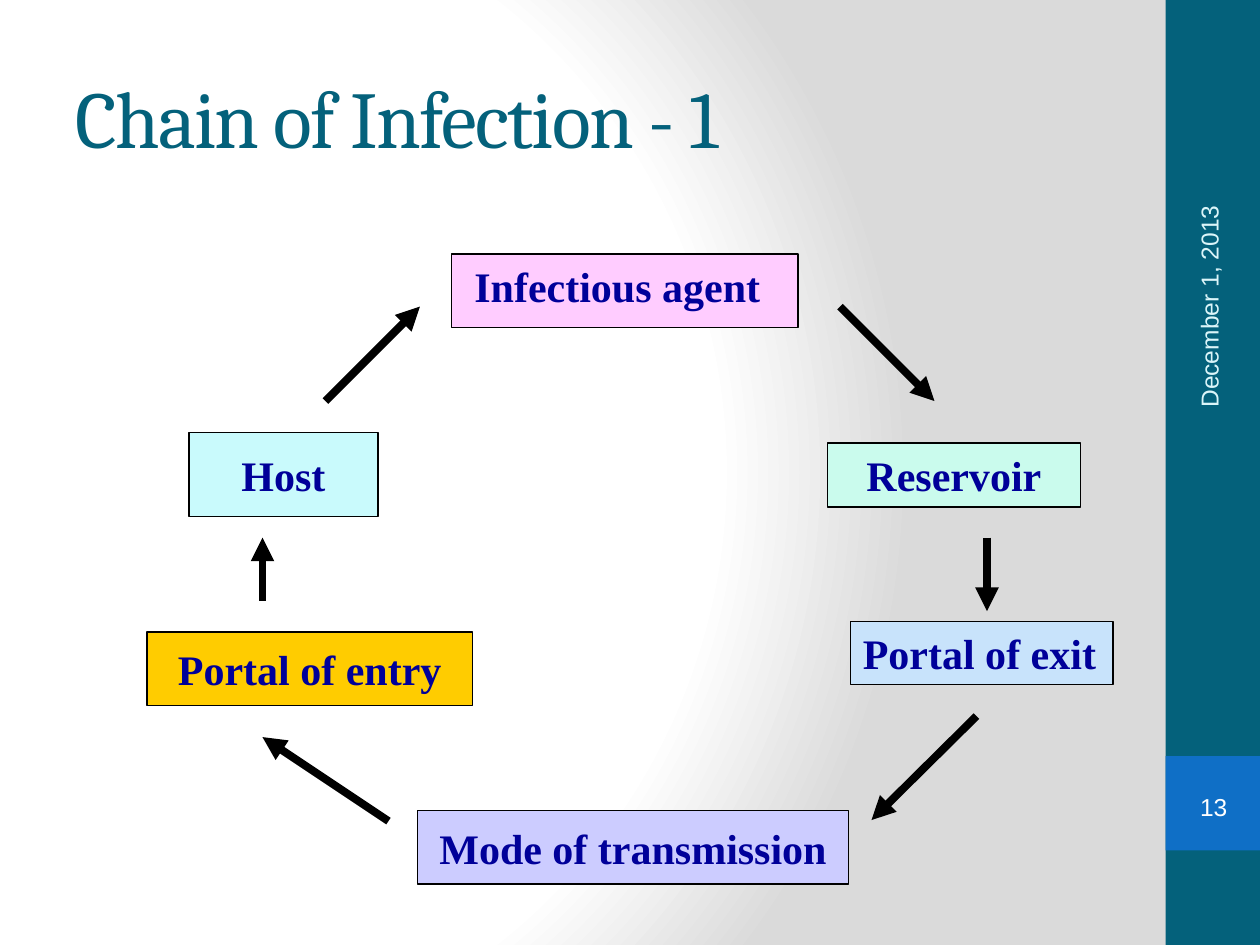
from lxml import etree
from pptx import Presentation
from pptx.dml.color import RGBColor
from pptx.enum.shapes import MSO_CONNECTOR as Conn, MSO_SHAPE as Shape
from pptx.enum.text import MSO_ANCHOR as Anchor, PP_ALIGN as Align
from pptx.oxml import parse_xml
from pptx.oxml.ns import nsdecls, qn
from pptx.util import Inches, Pt

TEAL = RGBColor(0x04, 0x61, 0x7B)
BLUE = RGBColor(0x0F, 0x6F, 0xC6)
NAVY = RGBColor(0x00, 0x00, 0x99)
PALE = RGBColor(0xDB, 0xF5, 0xF9)
WHITE = RGBColor(0xFF, 0xFF, 0xFF)
BLACK = RGBColor(0x00, 0x00, 0x00)
PINK = RGBColor(0xFF, 0xCC, 0xFF)
LILAC = RGBColor(0xCC, 0xCC, 0xFF)
GOLD = RGBColor(0xFF, 0xCC, 0x00)
CYAN = RGBColor(0xC9, 0xFA, 0xFC)
MINT = RGBColor(0xCA, 0xFB, 0xED)
SKY = RGBColor(0xC8, 0xE3, 0xFB)

# The slide is a grid of 120 columns by 90 rows, twelve to the inch
COLS, ROWS = 120, 90
CELL = Inches(1) // 12

# Links of the chain: column, row, width, height, fill, text, anchor, alignment
LINKS = [
    (29, 0, 33, 7, PINK, "", Anchor.TOP, Align.LEFT),
    (25.8, 53, 41, 7, LILAC, "Mode of transmission", Anchor.MIDDLE, Align.CENTER),
    (0, 36, 31, 7, GOLD, "Portal of entry", Anchor.MIDDLE, Align.CENTER),
    (4, 17, 18, 8, CYAN, "Host", Anchor.MIDDLE, Align.CENTER),
    (30, 0, 34.2, 6, None, "Infectious agent", Anchor.TOP, Align.LEFT),
    (64.8, 18, 24.1, 6.1, MINT, "Reservoir", Anchor.TOP, Align.CENTER),
    (67, 35, 25, 6, SKY, "Portal of exit", Anchor.TOP, Align.LEFT),
]
# Arrows between links: from column, row, to column, row
ARROWS = [
    (66, 5, 75, 14), (80, 27, 80, 34), (79, 44, 69, 53.9),
    (11, 33, 11, 27), (17, 14, 26, 5), (23, 54, 11, 46),
]


def cells(*nums):
    return [round(n * CELL) for n in nums]


def block(slide, box, fill=None, line=None, kind=Shape.RECTANGLE):
    shape = slide.shapes.add_shape(kind, *cells(*box))
    shape.shadow.inherit = False
    if fill is None:
        shape.fill.background()
    else:
        shape.fill.solid()
        shape.fill.fore_color.rgb = fill
    if line is None:
        shape.line.fill.background()
    else:
        shape.line.color.rgb = line
        shape.line.width = Pt(0.75)
    return shape


def write(shape, text, font, size, color, bold=False, align=Align.LEFT,
          anchor=Anchor.MIDDLE, wrap=True):
    frame = shape.text_frame
    frame.word_wrap = wrap
    frame.vertical_anchor = anchor
    para = frame.paragraphs[0]
    para.text = text
    para.alignment = align
    para.font.name = font
    para.font.size = Pt(size)
    para.font.bold = bold
    para.font.color.rgb = color
    return frame


def arrow(slide, x1, y1, x2, y2):
    line = slide.shapes.add_connector(Conn.STRAIGHT, *cells(x1, y1, x2, y2))
    line.line.color.rgb = BLACK
    line.line.width = Pt(4.5)
    etree.SubElement(line.line._get_or_add_ln(), qn("a:tailEnd"), type="triangle")
    etree.SubElement(line.element.spPr, qn("a:effectLst"))


def backdrop(slide):
    slide.background.fill.solid()
    solid = slide.element.find(".//" + qn("p:bgPr")).find(qn("a:solidFill"))
    stops = "".join(
        f'<a:gs pos="{pos * 1000}"><a:srgbClr val="{color}"/></a:gs>'
        for pos, color in [(0, "FFFFFF"), (75, "FFFFFF"), (100, "DADADA")])
    glow = parse_xml(
        f'<a:gradFill {nsdecls("a")} rotWithShape="1"><a:gsLst>{stops}</a:gsLst>'
        '<a:path path="circle"><a:fillToRect l="20000" t="50000" r="100000"'
        ' b="50000"/></a:path></a:gradFill>')
    solid.getparent().replace(solid, glow)


def sidebar(slide, x, y, w, h):
    block(slide, (x, y, w, h), TEAL)
    block(slide, (x, y + 0.8 * h, w, w), BLUE)
    # Date, turned to read upwards
    long, thick = 32, 4.8
    mid = x + 0.46 * w
    date = slide.shapes.add_textbox(
        *cells(mid - long / 2, y + 24 - thick / 2, long, thick))
    date.rotation = 270
    write(date, "December 1, 2013", "Arial", 14, PALE)
    # Page number
    page = block(slide, (x + 1, y + 74.2, 7.2, 5.2), kind=Shape.DOUBLE_BRACKET)
    frame = write(page, "13", "Arial", 14, WHITE, align=Align.CENTER)
    frame.margin_left = frame.margin_right = 0
    frame.margin_top = frame.margin_bottom = 0


def heading(slide, x, y, w, h):
    title = slide.shapes.add_textbox(*cells(x, y, w, h))
    frame = write(title, "Chain of Infection - 1", "Cambria", 46, TEAL)
    frame.paragraphs[0].runs[0].font._element.set("spc", "-100")


def chain(slide, x, y):
    for col, row, w, h, fill, text, anchor, align in LINKS:
        box = (x + col, y + row, w, h)
        if fill is None:
            link = slide.shapes.add_textbox(*cells(*box))
        else:
            link = block(slide, box, fill, BLACK)
        if text:
            write(link, text, "Times New Roman", 24, NAVY, True, align, anchor,
                  wrap=anchor == Anchor.TOP)
    for x1, y1, x2, y2 in ARROWS:
        arrow(slide, x + x1, y + y1, x + x2, y + y2)


def main():
    deck = Presentation()
    deck.slide_width, deck.slide_height = cells(COLS, ROWS)
    slide = deck.slides.add_slide(deck.slide_layouts[6])
    backdrop(slide)
    sidebar(slide, COLS - 9, 0, 9, ROWS)
    chain(slide, 14, 24.2)
    heading(slide, 6, 3.6, 100, 15)
    deck.save("out.pptx")


if __name__ == "__main__":
    main()
